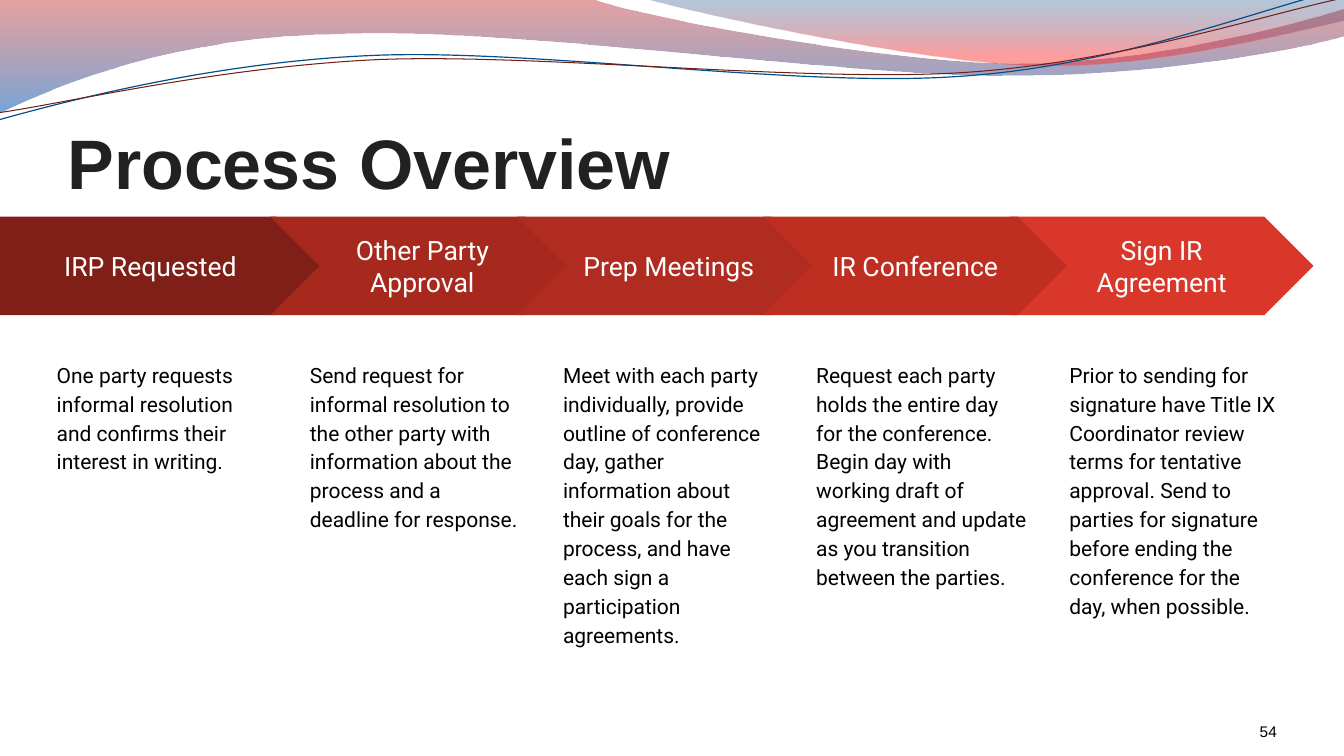
"""Build the Process Overview slide: a wave banner, five process arrows and their descriptions."""
from lxml.etree import SubElement
from pptx import Presentation
from pptx.dml.color import RGBColor
from pptx.enum.shapes import MSO_SHAPE
from pptx.enum.text import MSO_ANCHOR, MSO_AUTO_SIZE, PP_ALIGN
from pptx.oxml.ns import qn
from pptx.util import Cm, Pt

THEME = {
    "title": {"name": "Arial", "size": Pt(50), "bold": True, "color": "212121"},
    "step": {"name": "Roboto", "size": Pt(19), "bold": False, "color": "FFFFFF"},
    "body": {"name": "Roboto", "size": Pt(15), "bold": False, "color": "000000"},
    "number": {"name": "Arial", "size": Pt(11), "bold": False, "color": "000000"},
    "arrows": ["801F17", "A7291E", "B02B20", "BE2F22", "D83729"],
    "red_wave": [(0, "C52B2B", 44), (1, "0059B6", 54)],
    "blue_wave": [(0, "004585", 29), (0.8, "FD2324", 44)],
    "blue_line": ("00508B", 0.85),
    "red_line": ("712017", 0.75),
}


def write(s, text, style, inset, anchor, align, spacing=1.0):
    """Put one formatted paragraph into a shape; inset is left, top, right, bottom in cm."""
    tf = s.text_frame
    left, top, right, bottom = (Cm(v) for v in inset)
    frame = {"auto_size": MSO_AUTO_SIZE.NONE, "word_wrap": True, "vertical_anchor": anchor,
             "margin_left": left, "margin_top": top, "margin_right": right, "margin_bottom": bottom}
    for name, value in frame.items():
        setattr(tf, name, value)
    p = tf.paragraphs[0]
    p.alignment, p.line_spacing = align, spacing
    r = p.add_run()
    r.text = text
    for name in ("name", "size", "bold"):
        setattr(r.font, name, THEME[style][name])
    r.font.color.rgb = RGBColor.from_string(THEME[style]["color"])


def draw_wave(shapes, start, segments, close):
    """Draw an outline in cm; two numbers make a line, six a Bézier curve."""
    points = [(Cm(x), Cm(y)) for seg in segments for x, y in zip(seg[::2], seg[1::2])]
    builder = shapes.build_freeform(Cm(start[0]), Cm(start[1]))
    builder.add_line_segments(points, close=close)
    s = builder.convert_to_shape()
    s.shadow.inherit = False
    lines = iter(list(s.element.iter(qn("a:lnTo"))))
    for seg in segments:
        group = [next(lines) for _ in seg[::2]]
        if len(group) == 3:
            outline = group[0].getparent()
            curve = SubElement(outline, qn("a:cubicBezTo"))
            group[0].addprevious(curve)
            for line in group:
                curve.append(line[0])
                outline.remove(line)
    return s


prs = Presentation()
prs.slide_width, prs.slide_height = Cm(33.87), Cm(19.05)
slide = prs.slides.add_slide(prs.slide_layouts[5])
shapes = slide.shapes

filled_waves = [
    ("red_wave", (0, 0), [
        (14.91, -0.03), (16.1, 0.43, 22.45, 1.6, 25.68, 1.6),
        (28.88, 1.6, 32.44, 0.66, 33.86, 0.23), (33.88, 0.91),
        (33.3, 1.12, 29.44, 1.93, 25.25, 1.91), (21.06, 1.91, 12.93, 0.71, 8.71, 0.86),
        (4.37, 0.91, 1.55, 2.11, -0.05, 2.87)]),
    ("blue_wave", (16.21, -0.03), [
        (17.25, 0.28, 23.09, 1.57, 26.04, 1.65), (28.96, 1.75, 32.56, 0.81, 33.86, 0.53),
        (33.86, 0)]),
]
for name, start, segments in filled_waves:
    s = draw_wave(shapes, start, segments, True)
    s.line.fill.background()
    s.fill.gradient()
    s.fill.gradient_angle = 270
    for stop, (position, color, _) in zip(s.fill.gradient_stops, THEME[name]):
        stop.position = position
        stop.color.rgb = RGBColor.from_string(color)
    for clr, (_, _, opacity) in zip(s.element.spPr.iter(qn("a:srgbClr")), THEME[name]):
        SubElement(clr, qn("a:alpha")).set("val", str(opacity * 1000))

line_waves = [
    ("blue_line", (-0.03, 3.02), [
        (1.6, 2.57, 5.33, 1.57, 9.37, 1.4), (13.39, 1.22, 20.04, 2.21, 24.1, 1.93),
        (28.19, 1.68, 31.78, 0.2, 33.78, -0.25)]),
    ("red_line", (-0.03, 2.84), [
        (1.57, 2.62, 5.54, 1.68, 9.58, 1.5), (13.64, 1.35, 20.22, 2.08, 24.26, 1.83),
        (28.3, 1.57, 31.88, 0.36, 33.86, -0.05)]),
]
for name, start, segments in line_waves:
    s = draw_wave(shapes, start, segments, False)
    color, width = THEME[name]
    s.fill.background()
    s.line.color.rgb = RGBColor.from_string(color)
    s.line.width = Pt(width)

title = shapes.title
box = {"left": Cm(1.7), "top": Cm(1.96), "width": Cm(30.76), "height": Cm(3.18)}
for name, value in box.items():
    setattr(title, name, value)
write(title, "Process Overview", "title", (0, 0.13, 0, 0), MSO_ANCHOR.BOTTOM, PP_ALIGN.LEFT)

steps = [
    (0, "IRP Requested",
     "One party requests informal resolution and confirms their interest in writing."),
    (1, "Other Party Approval",
     "Send request for informal resolution to the other party with information about the "
     "process and a deadline for response."),
    (2, "Prep Meetings",
     "Meet with each party individually, provide outline of conference day, gather information "
     "about their goals for the process, and have each sign a participation agreements."),
    (4, "Sign IR Agreement",
     "Prior to sending for signature have Title IX Coordinator review terms for tentative "
     "approval. Send to parties for signature before ending the conference for the day, "
     "when possible."),
    (3, "IR Conference",
     "Request each party holds the entire day for the conference. Begin day with working draft "
     "of agreement and update as you transition between the parties."),
]
inset = (0.34,) * 4
for column, label, description in steps:
    if column == 0:
        kind, left, width = MSO_SHAPE.PENTAGON, 0, 8.2
    else:
        kind, left, width = MSO_SHAPE.CHEVRON, 0.61 + 6.21 * column, 7.65
    s = shapes.add_shape(kind, Cm(left), Cm(5.46), Cm(width), Cm(2.48))
    s.shadow.inherit = False
    s.fill.solid()
    s.fill.fore_color.rgb = RGBColor.from_string(THEME["arrows"][column])
    s.line.fill.background()
    write(s, label, "step", inset, MSO_ANCHOR.MIDDLE, PP_ALIGN.CENTER)
    s = shapes.add_textbox(Cm(1.09 + 6.38 * column), Cm(8.69), Cm(6), Cm(8.71))
    write(s, description, "body", inset, MSO_ANCHOR.TOP, PP_ALIGN.LEFT, 1.15)

s = shapes.add_textbox(Cm(29.36), Cm(17.65), Cm(2.82), Cm(1.02))
write(s, "54", "number", (0, 0, 0, 0), MSO_ANCHOR.BOTTOM, PP_ALIGN.RIGHT)

prs.save("out.pptx")
